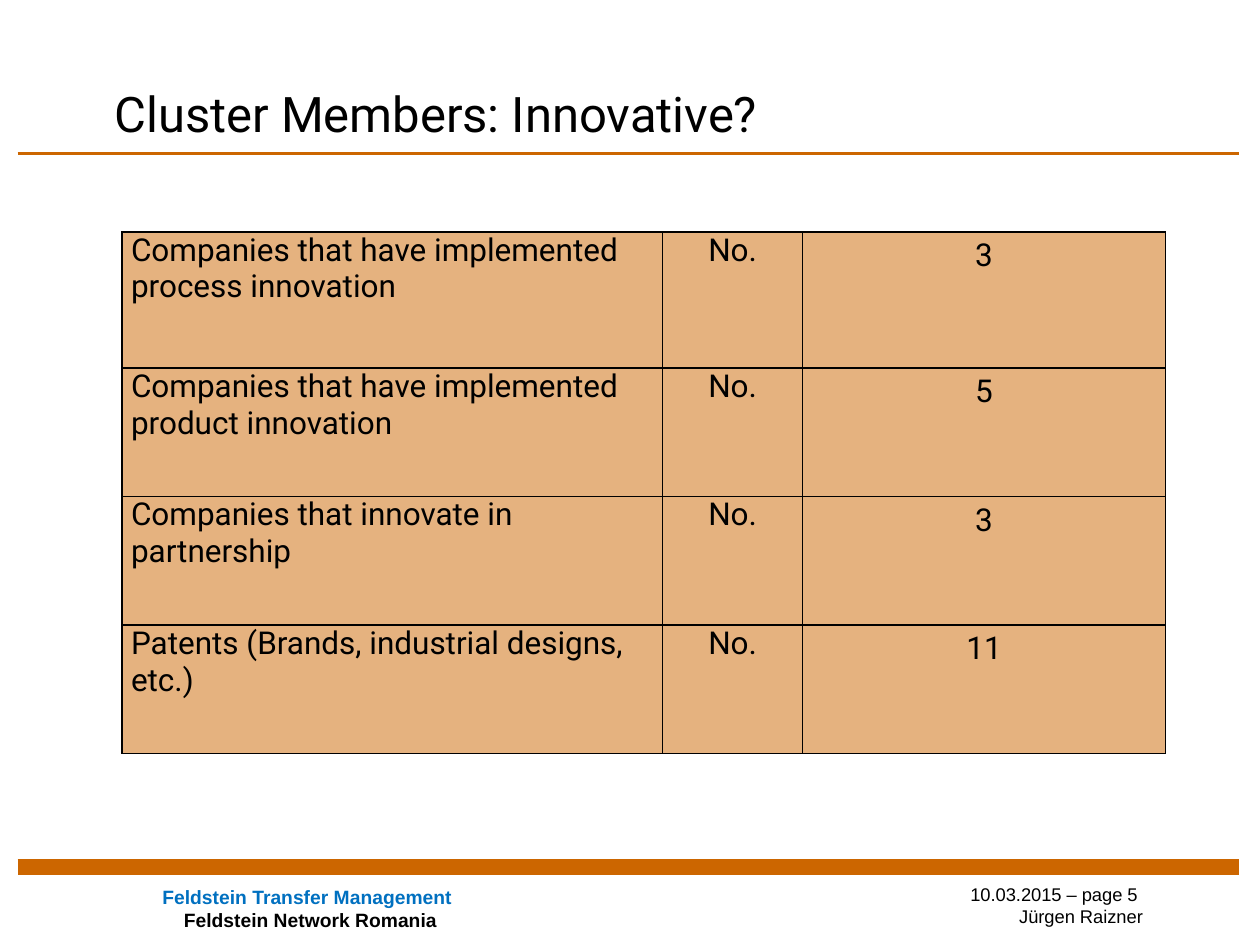
import pptx
import pptx.dml.color
import pptx.enum.shapes
import pptx.enum.text
import pptx.oxml
import pptx.oxml.ns
import pptx.util
from lxml import etree

Inches, Pt = pptx.util.Inches, pptx.util.Pt
ALIGN, ANCHOR = pptx.enum.text.PP_ALIGN, pptx.enum.text.MSO_ANCHOR
qn = pptx.oxml.ns.qn

# Content
TITLE = "Cluster Members: Innovative?"
INNOVATION_ROWS = [
    ("Companies that have implemented process innovation", "No.", "3"),
    ("Companies that have implemented product innovation", "No.", "5"),
    ("Companies that innovate in partnership", "No.", "3"),
    ("Patents (Brands, industrial designs, etc.)", "No.", "11"),
]
PAGE_INFO = ["10.03.2015 – page 5 ", "Jürgen Raizner"]
ORGANISATION = [("Feldstein Transfer Management", "blue"),
                ("Feldstein Network Romania", "black")]

# Style and layout
COLORS = {"orange": "CC6600", "blue": "0070C0", "black": "000000"}
RULES = [(1.22, 2), (6.88, 9)]  # height on the slide, line width
COLUMN_WIDTHS = [4.29, 1.11, 2.88]
ROW_HEIGHTS = [1.08, 1.02, 1.02, 1.02]
COLUMN_ALIGNS = [ALIGN.LEFT, ALIGN.CENTER, ALIGN.CENTER]
COLUMN_SPACINGS = [1.0, 1.0, 1.15]


def rgb(color):
    return pptx.dml.color.RGBColor.from_string(COLORS[color])


def add_run(paragraph, text, size, font, color="black", bold=False):
    run = paragraph.add_run()
    run.text = text
    run.font.size = Pt(size)
    run.font.name = font
    run.font.bold = bold
    run.font.color.rgb = rgb(color)


def add_frame(slide, left, top, width, height):
    frame = slide.shapes.add_textbox(
        Inches(left), Inches(top), Inches(width), Inches(height)).text_frame
    frame.word_wrap = True
    return frame


def add_lines(frame, count):
    return [frame.paragraphs[0]] + [frame.add_paragraph() for _ in range(count - 1)]


def style_cell(cell):
    cell.margin_left = cell.margin_right = Inches(0.07)
    cell.margin_top = cell.margin_bottom = 0
    cell.fill.solid()
    cell.fill.fore_color.rgb = rgb("orange")
    properties = cell._tc.get_or_add_tcPr()
    shade = properties.find(".//" + qn("a:srgbClr"))
    etree.SubElement(shade, qn("a:alpha"), val="50000")
    for position, side in enumerate(("lnL", "lnR", "lnT", "lnB")):
        border = etree.Element(qn("a:" + side), w=str(Pt(1)))
        fill = etree.SubElement(border, qn("a:solidFill"))
        etree.SubElement(fill, qn("a:srgbClr"), val=COLORS["black"])
        properties.insert(position, border)


def add_rules(slide):
    for y, width in RULES:
        rule = slide.shapes.add_connector(
            pptx.enum.shapes.MSO_CONNECTOR.STRAIGHT,
            Inches(0.14), Inches(y), Inches(9.83), Inches(y))
        rule.line.color.rgb = rgb("orange")
        rule.line.width = Pt(width)
        etree.SubElement(rule._element.spPr, qn("a:effectLst"))


def add_footer(slide):
    page_frame = add_frame(slide, 7.25, 6.96, 1.92, 0.45)
    for line, text in zip(add_lines(page_frame, len(PAGE_INFO)), PAGE_INFO):
        line.alignment = ALIGN.RIGHT
        add_run(line, text, 10.5, "Arial")

    organisation_frame = add_frame(slide, 1.19, 6.98, 2.51, 0.47)
    organisation_frame.margin_right = 0
    lines = add_lines(organisation_frame, len(ORGANISATION))
    for line, (text, color) in zip(lines, ORGANISATION):
        add_run(line, text, 11, "Arial", color, bold=True)
    lines[1]._p.get_or_add_pPr().set("marL", str(Inches(0.17)))


def add_innovation_table(slide):
    table = slide.shapes.add_table(
        len(ROW_HEIGHTS), len(COLUMN_WIDTHS), Inches(0.97), Inches(1.84),
        Inches(sum(COLUMN_WIDTHS)), Inches(sum(ROW_HEIGHTS))).table
    table.first_row = table.horz_banding = False
    for column, width in zip(table.columns, COLUMN_WIDTHS):
        column.width = Inches(width)
    for row, height, texts in zip(table.rows, ROW_HEIGHTS, INNOVATION_ROWS):
        row.height = Inches(height)
        for cell, text, align, spacing in zip(
                row.cells, texts, COLUMN_ALIGNS, COLUMN_SPACINGS):
            style_cell(cell)
            paragraph = cell.text_frame.paragraphs[0]
            paragraph.alignment = align
            paragraph.line_spacing = spacing
            add_run(paragraph, text, 18, "Roboto")


def add_title(slide):
    frame = add_frame(slide, 0.81, 0.15, 8.33, 1.25)
    frame.vertical_anchor = ANCHOR.BOTTOM
    frame.margin_bottom = Inches(0.27)
    add_run(frame.paragraphs[0], TITLE, 28, "Roboto")


def main():
    deck = pptx.Presentation()
    deck.slide_width, deck.slide_height = Inches(10), Inches(7.5)
    slide = deck.slides.add_slide(deck.slide_layouts[6])
    add_rules(slide)
    add_footer(slide)
    add_innovation_table(slide)
    add_title(slide)
    deck.save("out.pptx")


if __name__ == "__main__":
    main()
